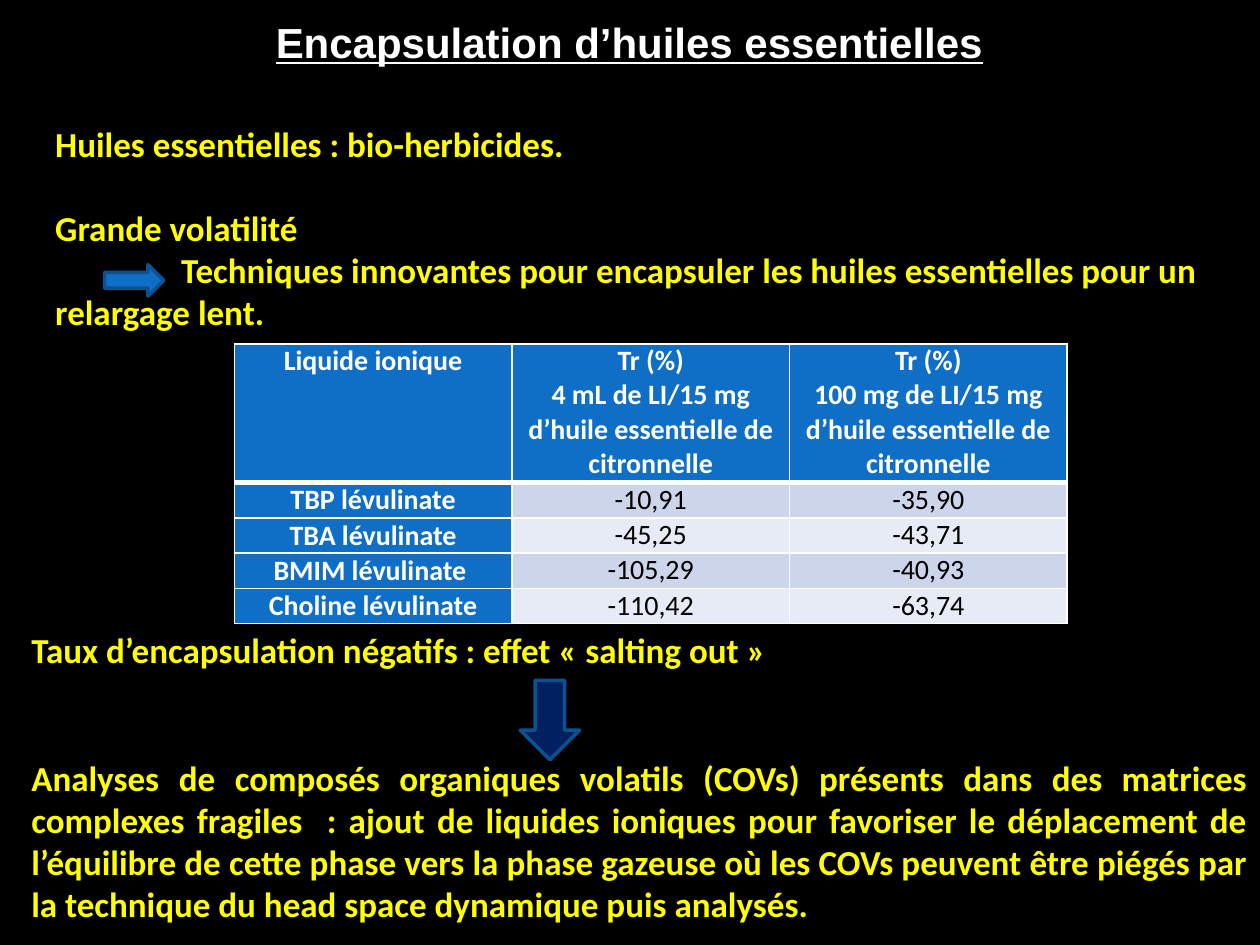
from dataclasses import dataclass

from lxml import etree
from pptx import Presentation
from pptx import util as u
from pptx.dml import color
from pptx.enum import shapes, text
from pptx.oxml import ns

COLORS = {
    "background": "000000",
    "title": "FFFFFF",
    "body": "FFFF00",
    "accent": "0F6FC6",
    "outline": "0B5292",
    "navy": "002060",
    "band_dark": "CCD5EA",
    "band_light": "E7EBF5",
    "value": "000000",
    "border": "FFFFFF",
}
LEFT, CENTER, JUSTIFY = text.PP_ALIGN.LEFT, text.PP_ALIGN.CENTER, text.PP_ALIGN.JUSTIFY
LINE_HEIGHT = 24.4


@dataclass
class Box:
    left: float
    top: float
    width: float
    height: float

    def lengths(self) -> list:
        return [u.Inches(n) for n in (self.left, self.top, self.width, self.height)]


@dataclass
class TextLine:
    content: str
    lines_before: int = 0
    first_indent: float = 0
    align: text.PP_ALIGN = JUSTIFY


@dataclass
class Style:
    size: float
    color: str
    bold: bool = True
    font: str = "Calibri"
    underline: bool = False


@dataclass
class Arrow:
    preset: shapes.MSO_SHAPE
    box: Box
    fill: str


BODY = Style(20, "body")
TITLE = Style(24, "title", font="Arial", underline=True)
HEADING = Style(16, "title")
VALUE = Style(16, "value", bold=False)

INTRODUCTION = [
    TextLine("Huiles essentielles : bio-herbicides."),
    TextLine("Grande volatilité", lines_before=1),
    TextLine("Techniques innovantes pour encapsuler les huiles essentielles pour un relargage lent.",
             first_indent=1, align=LEFT),
]
CONCLUSION = [
    TextLine("Taux d’encapsulation négatifs : effet « salting out »"),
    TextLine("Analyses de composés organiques volatils (COVs) présents dans des matrices "
             "complexes fragiles  : ajout de liquides ioniques pour favoriser le déplacement de "
             "l’équilibre de cette phase vers la phase gazeuse où les COVs peuvent être piégés par "
             "la technique du head space dynamique puis analysés.", lines_before=2),
]
ROWS = [
    ("Liquide ionique",
     "Tr (%)\n4 mL de LI/15 mg d’huile essentielle de citronnelle",
     "Tr (%)\n100 mg de LI/15 mg d’huile essentielle de citronnelle"),
    ("TBP lévulinate", "-10,91", "-35,90"),
    ("TBA lévulinate", "-45,25", "-43,71"),
    ("BMIM lévulinate ", "-105,29", "-40,93"),
    ("Choline lévulinate", "-110,42", "-63,74"),
]
ARROWS = [
    Arrow(shapes.MSO_SHAPE.RIGHT_ARROW, Box(0.83, 2.1, 0.47, 0.25), "accent"),
    Arrow(shapes.MSO_SHAPE.DOWN_ARROW, Box(4.13, 5.4, 0.47, 0.63), "navy"),
]


def rgb(name: str) -> color.RGBColor:
    return color.RGBColor.from_string(COLORS[name])


def paint(fill, name: str) -> None:
    fill.solid()
    fill.fore_color.rgb = rgb(name)


def format_runs(paragraph, style: Style) -> None:
    for run in paragraph.runs:
        run.font.name = style.font
        run.font.size = u.Pt(style.size)
        run.font.bold = style.bold
        run.font.underline = style.underline
        run.font.color.rgb = rgb(style.color)


def add_text(slide, box: Box, lines: list[TextLine], style: Style, wrap: bool = True) -> None:
    frame = slide.shapes.add_textbox(*box.lengths()).text_frame
    frame.word_wrap = wrap
    frame.text = "\n".join(line.content for line in lines)
    for paragraph, line in zip(frame.paragraphs, lines):
        paragraph.alignment = line.align
        paragraph.space_before = u.Pt(line.lines_before * LINE_HEIGHT)
        if line.first_indent:
            properties = paragraph._p.get_or_add_pPr()
            properties.set("marL", "0")
            properties.set("indent", str(u.Inches(line.first_indent)))
        format_runs(paragraph, style)


def add_borders(cell, row: int) -> None:
    widths = {"lnL": 1, "lnR": 1, "lnT": 3 if row == 1 else 1, "lnB": 3 if row == 0 else 1}
    properties = cell._tc.get_or_add_tcPr()
    for tag, width in widths.items():
        line = etree.SubElement(properties, ns.qn(f"a:{tag}"), w=str(u.Pt(width)))
        fill = etree.SubElement(line, ns.qn("a:solidFill"))
        etree.SubElement(fill, ns.qn("a:srgbClr"), val=COLORS["border"])


def fill_cell(cell, content: str, row: int, column: int) -> None:
    is_heading = row == 0 or column == 0
    cell.margin_left = cell.margin_right = u.Inches(0.07)
    cell.margin_top = cell.margin_bottom = 0
    if row and column == 0:
        cell.vertical_anchor = text.MSO_ANCHOR.MIDDLE
    cell.text_frame.text = content
    for paragraph in cell.text_frame.paragraphs:
        paragraph.alignment = CENTER
        format_runs(paragraph, HEADING if is_heading else VALUE)
    add_borders(cell, row)
    band = "band_dark" if row % 2 else "band_light"
    paint(cell.fill, "accent" if is_heading else band)


def add_results_table(slide, box: Box) -> None:
    table = slide.shapes.add_table(len(ROWS), len(ROWS[0]), *box.lengths()).table
    for row, contents in enumerate(ROWS):
        table.rows[row].height = u.Inches(0.28 if row else 1.1)
        for column, content in enumerate(contents):
            fill_cell(table.cell(row, column), content, row, column)


def add_arrow(slide, arrow: Arrow) -> None:
    shape = slide.shapes.add_shape(arrow.preset, *arrow.box.lengths())
    shape.shadow.inherit = False
    paint(shape.fill, arrow.fill)
    shape.line.color.rgb = rgb("outline")
    shape.line.width = u.Pt(2)


def main() -> None:
    presentation = Presentation()
    presentation.slide_width, presentation.slide_height = u.Inches(10), u.Inches(7.5)
    slide = presentation.slides.add_slide(presentation.slide_layouts[6])
    paint(slide.background.fill, "background")
    add_results_table(slide, Box(1.86, 2.73, 6.61, 2.22))
    add_text(slide, Box(0.34, 0.92, 9.66, 2.12), INTRODUCTION, BODY)
    add_text(slide, Box(0.15, 4.94, 9.85, 2.46), CONCLUSION, BODY)
    title = TextLine("Encapsulation d’huiles essentielles", align=LEFT)
    add_text(slide, Box(2.09, 0.08, 6.05, 0.5), [title], TITLE, wrap=False)
    for arrow in ARROWS:
        add_arrow(slide, arrow)
    presentation.save("out.pptx")


if __name__ == "__main__":
    main()
